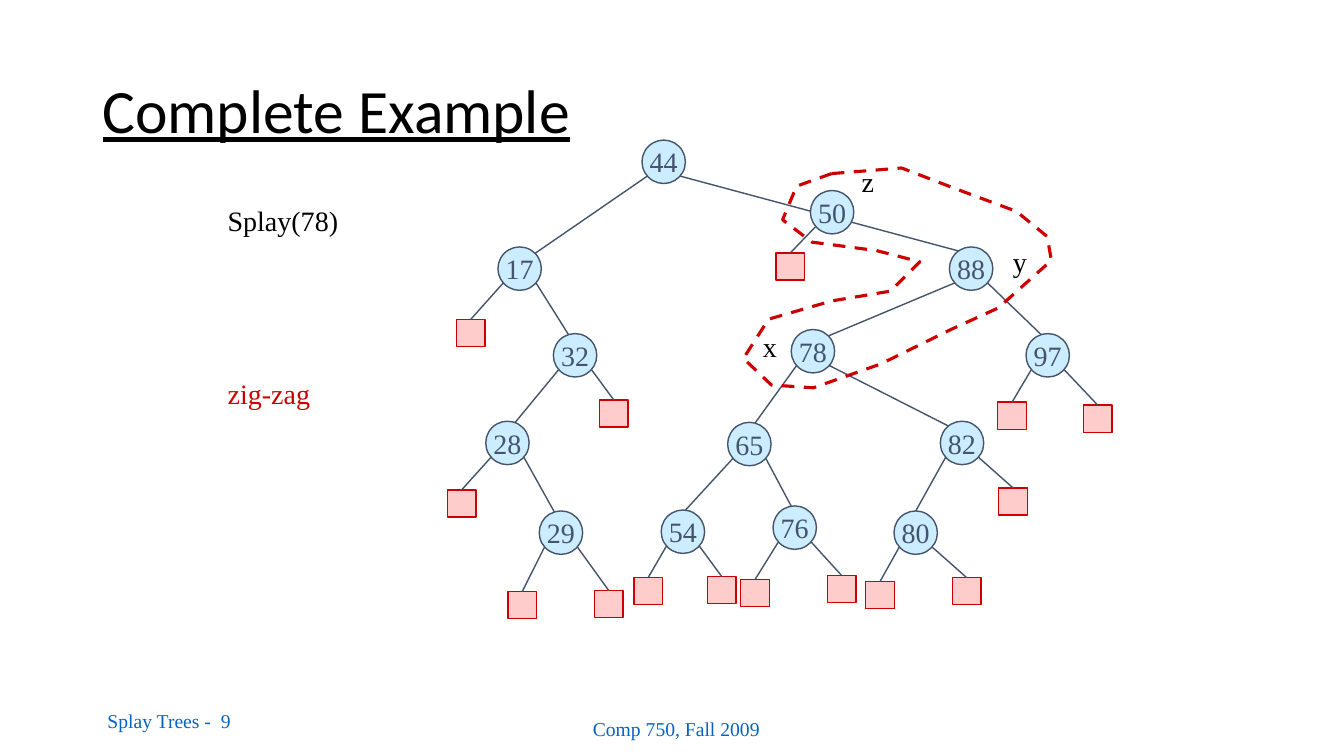
from math import sqrt

from lxml.etree import SubElement
from pptx import Presentation
from pptx.dml.color import RGBColor
from pptx.enum.dml import MSO_LINE
from pptx.enum.shapes import MSO_CONNECTOR as Conn, MSO_SHAPE as Kind
from pptx.enum.text import MSO_ANCHOR as Anchor, PP_ALIGN as Align
from pptx.oxml.ns import qn
from pptx.util import Pt

# Content: all lengths in points
SERIF, SANS = "Times New Roman", "Calibri"
SLATE, RED, BLACK, LINK = "44546A", "CC0000", "000000", "0563C1"
SKY, PINK = "CCECFF", "FFCCCC"

# text, left, top, width, height, size, font, colour, align, anchor, wrap
TEXTS = [
    ("Comp 750, Fall 2009", 408.2, 502.6, 149.8, 36, 14, SERIF, LINK, Align.CENTER, Anchor.MIDDLE, True),
    ("Splay Trees -  9", 69.7, 500.4, 216, 28.8, 14, SERIF, LINK, Align.LEFT, Anchor.MIDDLE, True),
    ("Complete Example", 66.2, 28.8, 828, 104.4, 44, SANS, BLACK, Align.LEFT, Anchor.MIDDLE, True),
]
# text, left, top, width, colour
LABELS = [
    ("Splay(78)", 155.5, 141.8, 93.6, BLACK),
    ("x", 537.8, 231.8, 24.5, BLACK),
    ("y", 716.4, 171.4, 24.5, BLACK),
    ("z", 608.4, 113.8, 23, BLACK),
    ("zig-zag", 155.5, 265.7, 73.4, RED),
]
# key, centre x, centre y, parent, offset of the edge's end from the centre
NODES = [
    (44, 474.1, 115.6, None, 0),
    (88, 693.7, 191.9, 44, -9),
    (17, 371.2, 191.9, 44, 11),
    (97, 748.4, 253.8, 88, -4.7),
    (32, 410.8, 253.8, 17, -4.7),
    (28, 362.5, 316.4, 32, 5.4),
    (29, 400.7, 380.5, 28, -4.7),
    (78, 580.7, 250.9, 88, 11),
    (65, 535.3, 317.2, 78, 4),
    (82, 687.2, 316.4, 78, -9.7),
    (54, 487.8, 379.8, 65, 1.8),
    (76, 567.7, 376.9, 65, -2.5),
    (80, 654.1, 380.5, 82, 0),
    (50, 594.4, 151.6, None, 0),
]
# parent, middle x, top
LEAVES = [
    (17, 336.2, 228.2), (32, 438.5, 285.8), (28, 329.8, 349.9),
    (29, 373, 422.6), (29, 434.9, 421.9), (54, 463, 412.6),
    (54, 515.5, 411.8), (97, 722.9, 287.3), (97, 784.1, 289.4),
    (82, 723.6, 348.5), (80, 628.6, 415.4), (80, 690.5, 412.6),
    (76, 539.3, 414), (76, 601.2, 411.1), (50, 564.5, 180.7),
]
# Dashed outline around z, y and x
LOOP = [
    (594, 123.8), (568.8, 133.2), (559.4, 157), (580.3, 172.8), (625.7, 178.6),
    (657.4, 187.2), (635.8, 208.1), (594, 214.6), (549.4, 227.5), (531.4, 255.6),
    (550.8, 275), (581, 277.2), (629.3, 259.9), (680.4, 235.4), (712.8, 219.6),
    (751, 186.5), (748.1, 169.2), (725.8, 151.2), (682.6, 135.4), (643.7, 119.5),
]
RAD = 15.5
LEAF_W, LEAF_H = 20.4, 19.4
OUT_X, OUT_Y = 11.7, 10.2  # where an edge leaves its parent

deck = Presentation()
deck.slide_width, deck.slide_height = Pt(960), Pt(540)
slide = deck.slides.add_slide(deck.slide_layouts[6])
shapes = slide.shapes


def rgb(code):
    return RGBColor.from_string(code)


def write(frame, text, size, font, color, align, anchor, wrap):
    frame.text = text
    frame.word_wrap = wrap
    frame.vertical_anchor = anchor
    para = frame.paragraphs[0]
    para.alignment = align
    face = para.runs[0].font
    face.size, face.name = Pt(size), font
    face.color.rgb = rgb(color)
    return para


def add_text(text, x, y, w, h, *style):
    box = shapes.add_textbox(Pt(x), Pt(y), Pt(w), Pt(h))
    return write(box.text_frame, text, *style)


def add_mark(kind, x, y, w, h, fill, line):
    mark = shapes.add_shape(kind, Pt(x), Pt(y), Pt(w), Pt(h))
    mark.shadow.inherit = False
    mark.fill.solid()
    mark.fill.fore_color.rgb = rgb(fill)
    mark.line.color.rgb = rgb(line)
    mark.line.width = Pt(1)
    return mark


def add_edge(top, x, y):
    px, py = spots[top]
    side = OUT_X if x > px else -OUT_X
    edge = shapes.add_connector(Conn.STRAIGHT, Pt(px + side), Pt(py + OUT_Y), Pt(x), Pt(y))
    edge.line.color.rgb = rgb(SLATE)
    edge.line.width = Pt(1)
    SubElement(edge._element.spPr, qn("a:effectLst"))
    return edge


# Title and footer
for row in TEXTS:
    para = add_text(*row)
para.line_spacing = 0.9
para.runs[0].font.underline = True

# Inner nodes, each with the edge from its parent
spots = {key: (x, y) for key, x, y, top, lean in NODES}
for key, x, y, top, lean in NODES:
    node = add_mark(Kind.OVAL, x - RAD, y - RAD, 2 * RAD, 2 * RAD, SKY, SLATE)
    write(node.text_frame, str(key), 20, SERIF, SLATE, Align.CENTER, Anchor.MIDDLE, False)
    if top:
        add_edge(top, x + lean, y - sqrt(RAD ** 2 - lean ** 2))

# Leaves
for top, x, y in LEAVES:
    leaf = add_mark(Kind.RECTANGLE, x - LEAF_W / 2, y, LEAF_W, LEAF_H, PINK, RED)
    add_edge(top, x, y).end_connect(leaf, 0)

# Labels
for text, x, y, w, color in LABELS:
    add_text(text, x, y, w, 31, 20, SERIF, color, Align.LEFT, Anchor.TOP, False)

# Zig-zag outline
pen = shapes.build_freeform(*LOOP[0], scale=Pt(1))
pen.add_line_segments(LOOP[1:], close=True)
loop = pen.convert_to_shape()
loop.shadow.inherit = False
loop.fill.background()
loop.line.color.rgb = rgb(RED)
loop.line.width = Pt(2.25)
loop.line.dash_style = MSO_LINE.DASH

deck.save("out.pptx")
